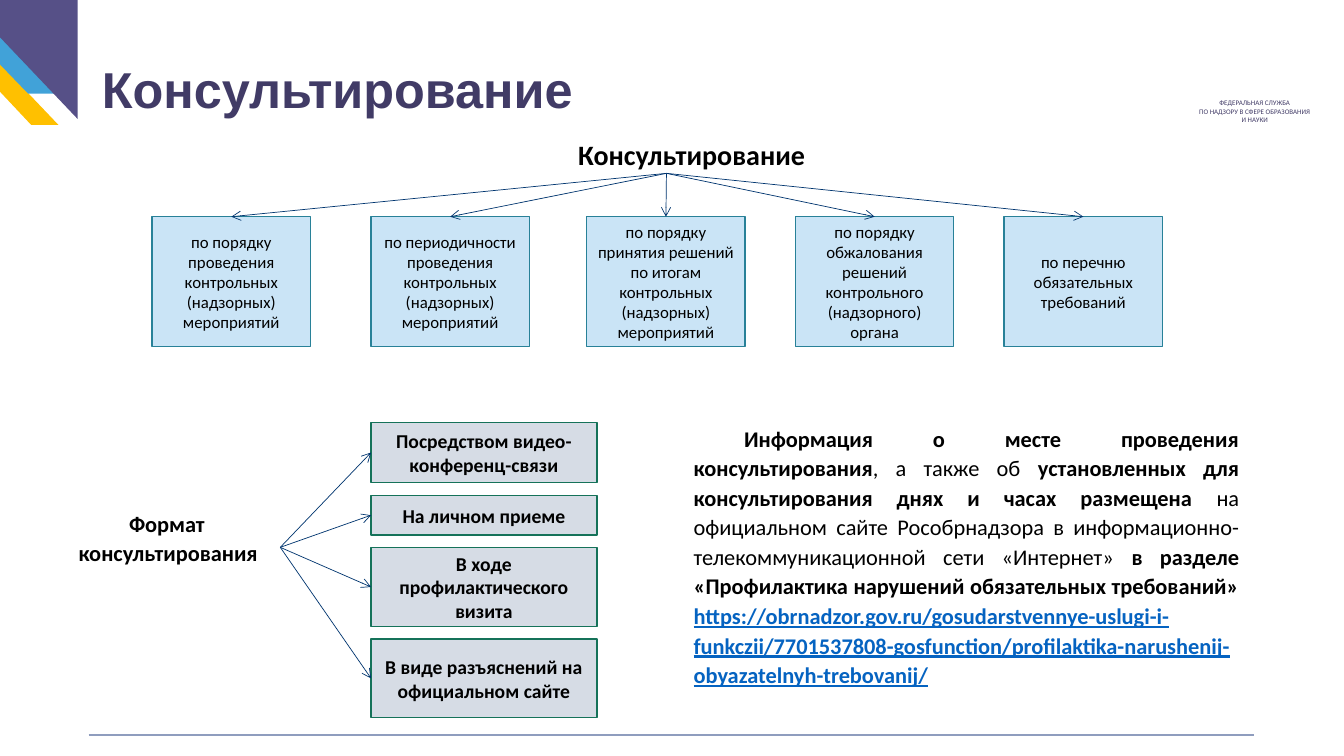
from lxml.etree import SubElement
from pptx import Presentation
from pptx.dml.color import RGBColor
from pptx.enum.shapes import MSO_CONNECTOR, MSO_SHAPE
from pptx.enum.text import MSO_ANCHOR, MSO_AUTO_SIZE, PP_ALIGN
from pptx.oxml.ns import qn
from pptx.util import Inches, Pt

# Content
TITLE = "Консультирование"
AGENCY = ["ФЕДЕРАЛЬНАЯ СЛУЖБА", "ПО НАДЗОРУ В СФЕРЕ ОБРАЗОВАНИЯ И НАУКИ"]
TOPICS_HEADING = "Консультирование"
TOPICS = [  # left edge, text
    (1.51, "по порядку проведения контрольных (надзорных) мероприятий"),
    (3.68, "по периодичности проведения контрольных (надзорных) мероприятий"),
    (5.82, "по порядку принятия решений по итогам контрольных (надзорных) мероприятий"),
    (7.89, "по порядку обжалования решений контрольного (надзорного) органа"),
    (9.96, "по перечню обязательных требований"),
]
FORMATS_HEADING = "Формат консультирования"
FORMATS = [  # height, text
    (0.6, "Посредством видео-конференц-связи"),
    (0.39, "На личном приеме"),
    (0.78, "В ходе профилактического визита"),
    (0.78, "В виде разъяснений на официальном сайте"),
]
BOLD, PLAIN = {"bold": True}, {"bold": False}
LINK = {"bold": True, "underline": True, "color": "link"}
INFORMATION = [
    ("Информация о месте проведения консультирования", BOLD),
    (", а также об ", PLAIN),
    ("установленных для консультирования днях и часах размещена ", BOLD),
    ("на официальном сайте Рособрнадзора в информационно-телекоммуникационной "
     "сети «Интернет» ", PLAIN),
    ("в разделе «Профилактика нарушений обязательных требований» ", BOLD),
    ("https://obrnadzor.gov.ru/gosudarstvennye-uslugi-i-funkczii/"
     "7701537808-gosfunction/profilaktika-narushenij-obyazatelnyh-trebovanij/", LINK),
]

COLORS = {
    "yellow": "FFC000", "blue": "41A2D8", "purple": "565087", "title": "413B66",
    "text": "000000", "link": "0563C1", "rule": "8F9DBE", "arrow": "00356F",
    "topic": "CAE4F6", "topic edge": "288198",
    "format": "D6DCE5", "format edge": "157259",
}
CORNER = [  # colour, outline within the slide
    ("yellow", [(0, 0.63), (0.58, 1.24), (0.31, 1.24), (0, 0.91)]),
    ("blue", [(0, 0.35), (0.55, 0.93), (0.28, 0.93), (0, 0.64)]),
    ("purple", [(0, 0), (0.77, 0), (0.77, 1.18), (0, 0.37)]),
]

# Layout, in inches
TOPIC_TOP, TOPIC_WIDTH, TOPIC_HEIGHT = 2.15, 1.57, 1.29
TOPIC_HUB, FORMAT_HUB = (6.61, 1.72), (2.78, 5.43)
FORMAT_LEFT, FORMAT_TOP, FORMAT_BOTTOM, FORMAT_WIDTH = 3.68, 4.19, 7.12, 2.24
TOP_SITE, LEFT_SITE = 0, 1


def color(name):
    return RGBColor.from_string(COLORS[name])


def write(frame, paragraphs, size, anchor=MSO_ANCHOR.TOP, margin=None,
          font_name="Calibri", **paragraph_format):
    """Fill a text frame; each paragraph is a list of (text, font format)."""
    frame.word_wrap = True
    frame.auto_size = MSO_AUTO_SIZE.NONE
    frame.vertical_anchor = anchor
    if margin is not None:
        for side in ("left", "top", "right", "bottom"):
            setattr(frame, f"margin_{side}", Inches(margin))
    for index, spans in enumerate(paragraphs):
        para = frame.add_paragraph() if index else frame.paragraphs[0]
        for name, value in paragraph_format.items():
            setattr(para, name, value)
        for text, font_format in spans:
            span = para.add_run()
            span.text = text
            values = {"name": font_name, "size": Pt(size), **font_format}
            span.font.color.rgb = color(values.pop("color", "text"))
            for name, value in values.items():
                setattr(span.font, name, value)


def add_text(area, *arguments, **options):
    box = slide.shapes.add_textbox(*map(Inches, area))
    write(box.text_frame, *arguments, **options)


def add_body_text(area, spans, size, alignment):
    """Add unpadded text with an indented first line."""
    add_text(area, [spans], size, margin=0, alignment=alignment, line_spacing=1.1)
    properties = slide.shapes[-1].text_frame.paragraphs[0]._p.get_or_add_pPr()
    properties.set("marL", "0")
    properties.set("indent", str(Inches(0.5)))


def add_box(area, text, size, kind, bold):
    box = slide.shapes.add_shape(MSO_SHAPE.RECTANGLE, *map(Inches, area))
    box.shadow.inherit = False
    box.fill.solid()
    box.fill.fore_color.rgb = color(kind)
    box.line.color.rgb = color(f"{kind} edge")
    box.line.width = Pt(1)
    write(box.text_frame, [[(text, {"bold": bold})]], size, MSO_ANCHOR.MIDDLE,
          alignment=PP_ALIGN.CENTER)
    return box


def add_line(start, end, line_color, width):
    line = slide.shapes.add_connector(
        MSO_CONNECTOR.STRAIGHT, *map(Inches, (*start, *end)))
    line.line.color.rgb = color(line_color)
    line.line.width = Pt(width)
    SubElement(line._element.spPr, qn("a:effectLst"))
    return line


def add_arrow(hub, box, site):
    arrow = add_line(hub, hub, "arrow", 0.5)
    arrow.end_connect(box, site)
    SubElement(arrow.line._get_or_add_ln(), qn("a:tailEnd"), type="arrow")


deck = Presentation()
deck.slide_width, deck.slide_height = Inches(13.33), Inches(7.5)
slide = deck.slides.add_slide(deck.slide_layouts[5])

# Corner decoration
for name, points in CORNER:
    outline = [(Inches(x), Inches(y)) for x, y in points]
    builder = slide.shapes.build_freeform(*outline[0])
    builder.add_line_segments(outline[1:], close=True)
    stripe = builder.convert_to_shape()
    stripe.shadow.inherit = False
    stripe.fill.solid()
    stripe.fill.fore_color.rgb = color(name)
    stripe.line.fill.background()

# Title, agency name and bottom rule
title = slide.shapes.title
title.left, title.top, title.width, title.height = map(Inches, (0.91, 0.53, 6.83, 0.71))
write(title.text_frame, [[(TITLE, {"bold": True, "color": "title"})]], 36,
      font_name="Arial", alignment=PP_ALIGN.LEFT)
add_text((11.77, 0.93, 1.35, 0.35), [[(line, {"color": "title"})] for line in AGENCY],
         5, alignment=PP_ALIGN.CENTER)
add_line((0.88, 7.29), (12.44, 7.29), "rule", 1.5)

# Consultation topics
add_body_text((4.67, 1.33, 3.88, 0.39), [(TOPICS_HEADING, BOLD)], 20, PP_ALIGN.CENTER)
for left, text in TOPICS:
    area = (left, TOPIC_TOP, TOPIC_WIDTH, TOPIC_HEIGHT)
    add_arrow(TOPIC_HUB, add_box(area, text, 12, "topic", False), TOP_SITE)

# Consultation formats, stacked with equal gaps
add_body_text((0.78, 5.03, 2, 0.8), [(FORMATS_HEADING, BOLD)], 16, PP_ALIGN.LEFT)
free_height = FORMAT_BOTTOM - FORMAT_TOP - sum(height for height, _ in FORMATS)
gap = free_height / (len(FORMATS) - 1)
top = FORMAT_TOP
for height, text in FORMATS:
    area = (FORMAT_LEFT, top, FORMAT_WIDTH, height)
    add_arrow(FORMAT_HUB, add_box(area, text, 14, "format", True), LEFT_SITE)
    top += height + gap

# Where the schedule is published
add_body_text((6.88, 4.19, 5.41, 2.74), INFORMATION, 16, PP_ALIGN.JUSTIFY)

deck.save("out.pptx")
